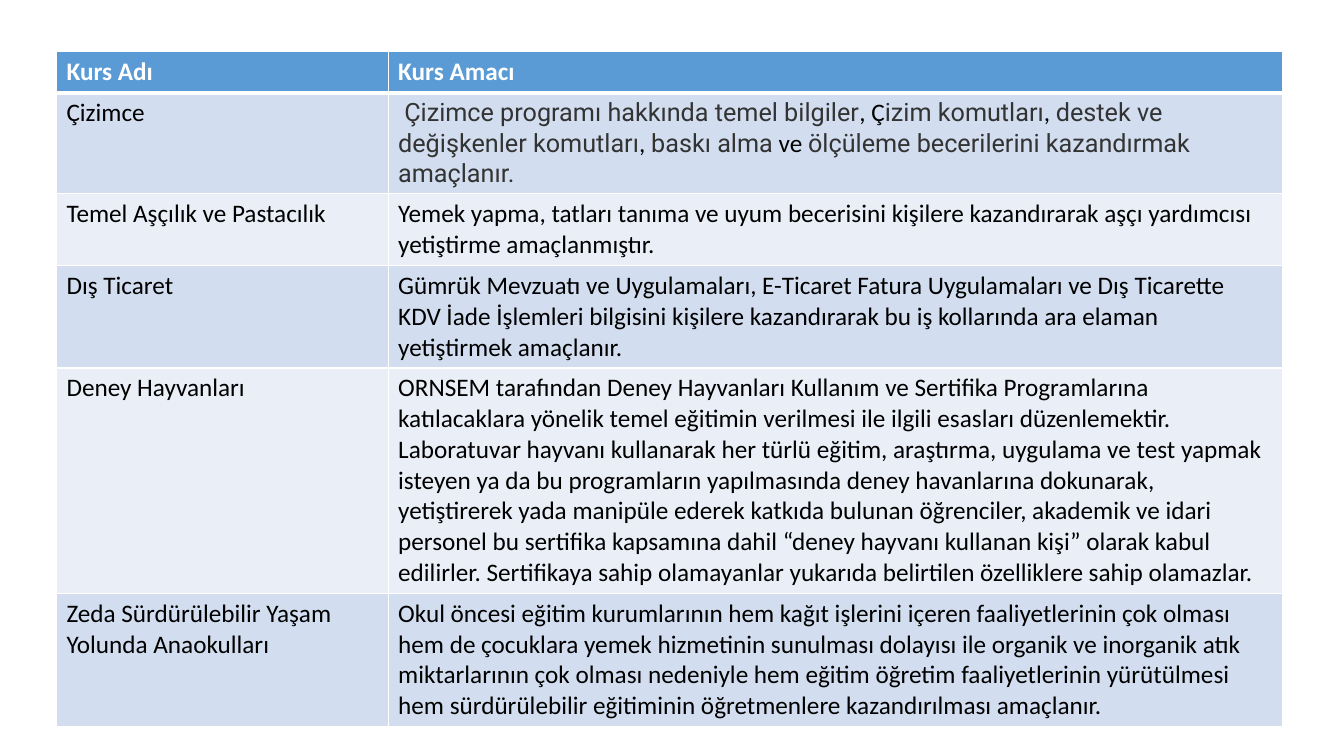
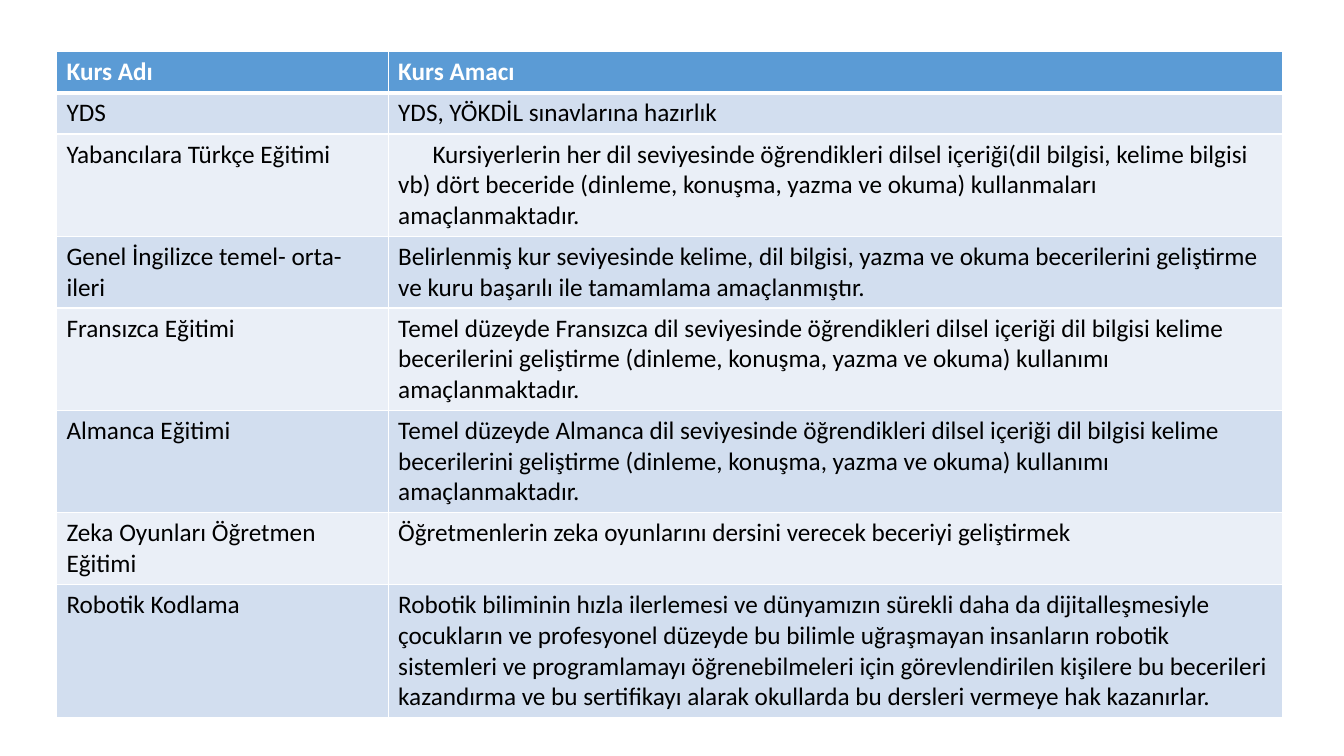
from dataclasses import dataclass

from lxml.etree import SubElement
from pptx import Presentation
from pptx.dml.color import RGBColor as RGB
from pptx.oxml.ns import qn
from pptx.util import Inches, Pt


@dataclass(frozen=True)
class Theme:
    font: str = "Calibri"
    alt_font: str = "Roboto"
    size: int = 18
    header: str = "5B9BD5"
    bands: tuple = ("D2DEEF", "EAEFF7")
    white: str = "FFFFFF"
    text: str = "000000"
    alt_text: str = "333333"
    rule: int = 1
    header_rule: int = 3


@dataclass(frozen=True)
class Rich:
    """Cell text of (text, is_alternate) runs with a first-line indent in inches."""
    runs: tuple
    indent: float = 0


THEME = Theme()
TABLE_BOX = (0.56, 0.51)
COLUMNS = (3.29, 8.87)
ROW_HEIGHT = 0.41
HEADINGS = ("Kurs Adı", "Kurs Amacı")


def language_aim(language):
    return (f"Temel düzeyde {language} dil seviyesinde öğrendikleri dilsel içeriği "
            "dil bilgisi kelime becerilerini geliştirme (dinleme, konuşma, yazma ve "
            "okuma) kullanımı amaçlanmaktadır.")


VOCATIONAL = [
    ("Çizimce", Rich((
        ("Çizimce programı hakkında temel bilgiler", True),
        (", Ç", False),
        ("izim komutları", True),
        (", ", False),
        ("destek ve değişkenler komutları", True),
        (", ", False),
        ("baskı alma", True),
        (" ve ", False),
        ("ölçüleme becerilerini kazandırmak amaçlanır.", True)), 0.06)),
    ("Temel Aşçılık ve Pastacılık",
     "Yemek yapma, tatları tanıma ve uyum becerisini kişilere kazandırarak aşçı "
     "yardımcısı yetiştirme amaçlanmıştır."),
    ("Dış Ticaret",
     "Gümrük Mevzuatı ve Uygulamaları, E-Ticaret Fatura Uygulamaları ve Dış Ticarette "
     "KDV İade İşlemleri bilgisini kişilere kazandırarak bu iş kollarında ara elaman "
     "yetiştirmek amaçlanır."),
    ("Deney Hayvanları",
     "ORNSEM tarafından Deney Hayvanları Kullanım ve Sertifika Programlarına "
     "katılacaklara yönelik temel eğitimin verilmesi ile ilgili esasları düzenlemektir. "
     "Laboratuvar hayvanı kullanarak her türlü eğitim, araştırma, uygulama ve test "
     "yapmak isteyen ya da bu programların yapılmasında deney havanlarına dokunarak, "
     "yetiştirerek yada manipüle ederek katkıda bulunan öğrenciler, akademik ve idari "
     "personel bu sertifika kapsamına dahil “deney hayvanı kullanan kişi” olarak kabul "
     "edilirler. Sertifikaya sahip olamayanlar yukarıda belirtilen özelliklere sahip "
     "olamazlar."),
    ("Zeda Sürdürülebilir Yaşam Yolunda Anaokulları",
     "Okul öncesi eğitim kurumlarının hem kağıt işlerini içeren faaliyetlerinin çok "
     "olması hem de çocuklara yemek hizmetinin sunulması dolayısı ile organik ve "
     "inorganik atık miktarlarının çok olması nedeniyle hem eğitim öğretim "
     "faaliyetlerinin yürütülmesi hem sürdürülebilir eğitiminin öğretmenlere "
     "kazandırılması amaçlanır."),
]

LANGUAGE_AND_CODING = [
    ("YDS", "YDS, YÖKDİL sınavlarına hazırlık"),
    ("Yabancılara Türkçe Eğitimi", Rich((
        ("Kursiyerlerin her dil seviyesinde öğrendikleri dilsel içeriği(dil bilgisi, "
         "kelime bilgisi vb) dört beceride (dinleme, konuşma, yazma ve okuma) "
         "kullanmaları amaçlanmaktadır.", False),), 0.34)),
    ("Genel İngilizce temel- orta- ileri",
     "Belirlenmiş kur seviyesinde kelime, dil bilgisi, yazma ve okuma becerilerini "
     "geliştirme ve kuru başarılı ile tamamlama amaçlanmıştır."),
    ("Fransızca Eğitimi", language_aim("Fransızca")),
    ("Almanca Eğitimi", language_aim("Almanca")),
    ("Zeka Oyunları Öğretmen Eğitimi",
     "Öğretmenlerin zeka oyunlarını dersini verecek beceriyi geliştirmek"),
    ("Robotik Kodlama",
     "Robotik biliminin hızla ilerlemesi ve dünyamızın sürekli daha da "
     "dijitalleşmesiyle çocukların ve profesyonel düzeyde bu bilimle uğraşmayan "
     "insanların robotik sistemleri ve programlamayı öğrenebilmeleri için "
     "görevlendirilen kişilere bu becerileri kazandırma ve bu sertifikayı alarak "
     "okullarda bu dersleri vermeye hak kazanırlar."),
]


def set_borders(cell, top, bottom):
    """Draw white cell borders; top and bottom are widths in points."""
    tc_pr = cell._tc.get_or_add_tcPr()
    widths = {"a:lnL": THEME.rule, "a:lnR": THEME.rule, "a:lnT": top, "a:lnB": bottom}
    for tag, width in widths.items():
        ln = SubElement(tc_pr, qn(tag), w=str(Pt(width)))
        fill = SubElement(ln, qn("a:solidFill"))
        SubElement(fill, qn("a:srgbClr"), val=THEME.white)


def write_cell(cell, content, row):
    is_header = row == 0
    set_borders(cell,
                THEME.header_rule if row == 1 else THEME.rule,
                THEME.header_rule if is_header else THEME.rule)
    cell.fill.solid()
    cell.fill.fore_color.rgb = RGB.from_string(
        THEME.header if is_header else THEME.bands[(row - 1) % 2])

    rich = content if isinstance(content, Rich) else Rich(((content, False),))
    p = cell.text_frame.paragraphs[0]
    if rich.indent:
        p._p.get_or_add_pPr().set("indent", str(Inches(rich.indent)))
    for text, is_alt in rich.runs:
        r = p.add_run()
        r.text = text
        r.font.name = THEME.alt_font if is_alt else THEME.font
        r.font.size = Pt(THEME.size)
        r.font.bold = is_header
        color = THEME.white if is_header else THEME.alt_text if is_alt else THEME.text
        r.font.color.rgb = RGB.from_string(color)


def add_course_slide(prs, courses):
    s = prs.slides.add_slide(prs.slide_layouts[6])
    rows = [HEADINGS, *courses]
    left, top = TABLE_BOX
    table = s.shapes.add_table(
        len(rows), len(COLUMNS), Inches(left), Inches(top),
        Inches(sum(COLUMNS)), Inches(ROW_HEIGHT * len(rows))).table
    for column, width in zip(table.columns, COLUMNS):
        column.width = Inches(width)
    for i, row in enumerate(rows):
        table.rows[i].height = Inches(ROW_HEIGHT)
        for j, content in enumerate(row):
            write_cell(table.cell(i, j), content, i)


def main():
    prs = Presentation()
    prs.slide_width, prs.slide_height = Inches(13.33), Inches(7.5)
    for courses in (VOCATIONAL, LANGUAGE_AND_CODING):
        add_course_slide(prs, courses)
    prs.save("out.pptx")


if __name__ == "__main__":
    main()
